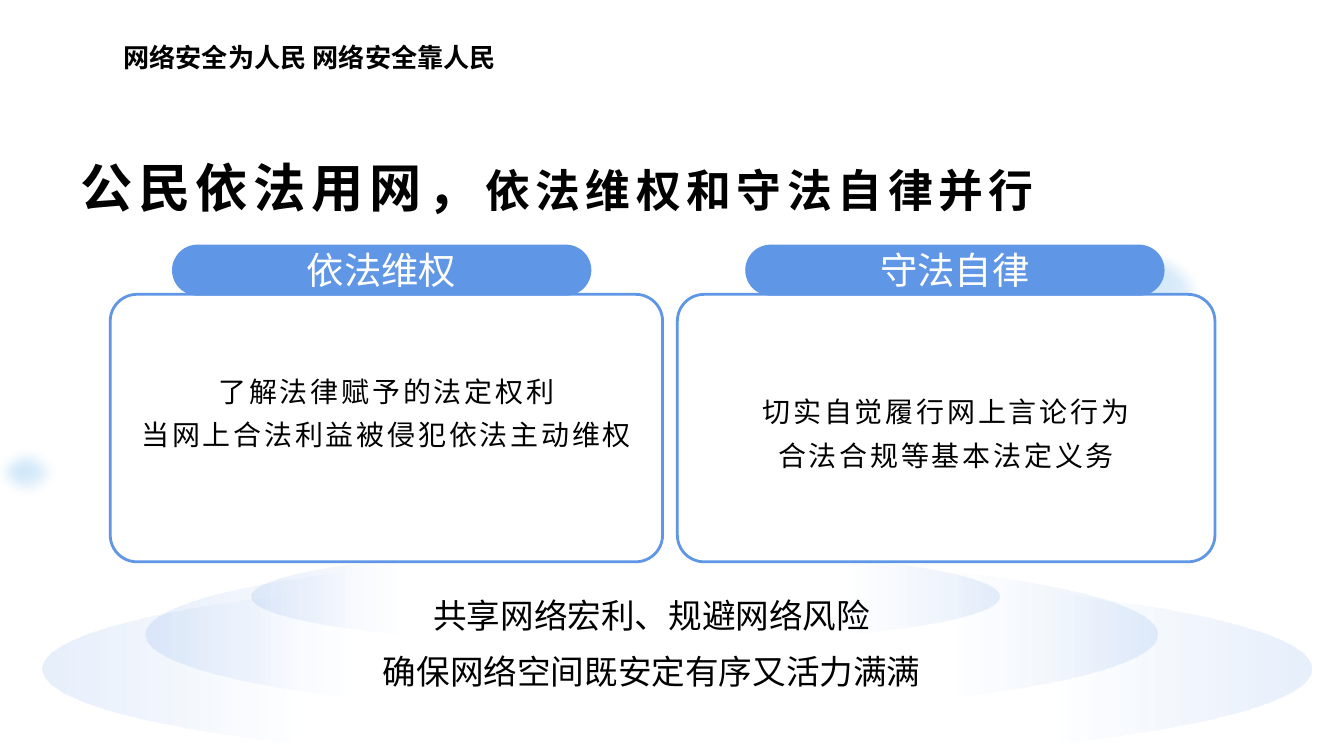
"""Builds a slide on lawful use of the internet by citizens."""
from pptx import Presentation
from pptx.dml.color import RGBColor
from pptx.enum import shapes, text
from pptx.oxml import ns, xmlchemy
from pptx.util import Pt

SCALE = 4572
SANS = "Noto Sans CJK SC"
BLUE, SKY, WHITE, BLACK = "6096E6", "21A9E9", "FFFFFF", "000000"
KIND = shapes.MSO_SHAPE
MID = text.PP_ALIGN.CENTER

SLOGAN = "网络安全为人民 网络安全靠人民"
TITLE = [("公民依法用网，", 28), ("依法维权和守法自律并行", 24)]
GOALS = ["共享网络宏利、规避网络风险", "确保网络空间既安定有序又活力满满"]
CARDS = [
    dict(head="依法维权", tab=256, left=164, wide=822, foot=70,
         lines=["了解法律赋予的法定权利", "当网上合法利益被侵犯依法主动维权"]),
    dict(head="守法自律", tab=1109, left=1008, wide=800, foot=10,
         lines=["切实自觉履行网上言论行为", "合法合规等基本法定义务"]),
]
RINGS = [((64, 857, 1888, 276), []), ((217, 829, 1506, 232), GOALS),
         ((374, 818, 1114, 140), [])]
DOTS = [(-16, 658, 114, 92), (1622, 364, 176, 140)]
RING = [(0, BLUE, 15), (20, BLUE, 0), (80, BLUE, 0), (100, BLUE, 15)]
GLOW = [(0, SKY, 35), (100, BLUE, 10)]

deck = Presentation()
deck.slide_width, deck.slide_height = 2000 * SCALE, 1125 * SCALE
slide = deck.slides.add_slide(deck.slide_layouts[6])


def tint(code):
    """Turn a hex string into a colour."""
    return RGBColor.from_string(code)


def node(parent, tag, **attrs):
    """Append a drawing element and return it."""
    item = xmlchemy.OxmlElement(tag)
    for key, value in attrs.items():
        item.set(key, str(value))
    parent.append(item)
    return item


def write(shape, lines, size=18, font=SANS, color=BLACK, bold=False, gap=0,
          align=None, lead=None, pad=(20, 10, 20, 10), anchor="MIDDLE"):
    """Fill a shape with lines, each a string or a list of sized runs."""
    frame = shape.text_frame
    frame.word_wrap = True
    frame.vertical_anchor = text.MSO_ANCHOR[anchor]
    (frame.margin_left, frame.margin_top, frame.margin_right,
     frame.margin_bottom) = [n * SCALE for n in pad]
    for i, line in enumerate(lines):
        para = frame.add_paragraph() if i else frame.paragraphs[0]
        para.alignment, para.line_spacing = align, lead
        for words, points in [(line, size)] if isinstance(line, str) else line:
            run = para.add_run()
            run.text = words
            face = run.font
            face.size, face.name, face.bold = Pt(points), font, bold
            face.color.rgb = tint(color)
            props = run._r.get_or_add_rPr()
            props.set("spc", str(int(gap * 100)))
            node(props, "a:ea", typeface=font)


def label(box, lines, **style):
    """Add a text box."""
    write(slide.shapes.add_textbox(*[n * SCALE for n in box]), lines, **style)


def draw(kind, box, fill=None, line=None, curve=None):
    """Add a preset shape with a plain fill and line."""
    shape = slide.shapes.add_shape(kind, *[n * SCALE for n in box])
    shape.shadow.inherit = False
    if fill:
        shape.fill.solid()
        shape.fill.fore_color.rgb = tint(fill)
    if line:
        shape.line.color.rgb = tint(line)
        shape.line.width = Pt(1.5)
    else:
        shape.line.fill.background()
    if curve:
        shape.adjustments[0] = curve
    return shape


def oval(box, stops, angle):
    """Add an ellipse with a see-through gradient."""
    shape = draw(KIND.OVAL, box)
    shape.fill.gradient()
    shape.fill.gradient_angle = angle
    stack = shape._element.spPr.find(ns.qn("a:gradFill")).find(ns.qn("a:gsLst"))
    for old in list(stack):
        stack.remove(old)
    for place, code, alpha in stops:
        stop = node(stack, "a:gs", pos=place * 1000)
        node(node(stop, "a:srgbClr", val=code), "a:alpha", val=alpha * 1000)
    return shape


def card(left, wide, lines, foot, **rest):
    """Add an outlined card with its statement."""
    shape = draw(KIND.ROUNDED_RECTANGLE, (left, 438, wide, 398), WHITE, BLUE, 0.1)
    write(shape, lines, size=15, gap=1.5, lead=1.3, align=MID,
          pad=(20, 10, 20, foot))


label((164, 52, 958, 68), [SLOGAN], size=14, bold=True, anchor="TOP")
label((100, 220, 1800, 116), [TITLE], bold=True, gap=3)
card(**CARDS[0])
for box, lines in RINGS:
    write(oval(box, RING, 180), lines, align=MID, lead=Pt(30))
for box in DOTS:
    dot = oval(box, GLOW, 315)
    node(dot._element.spPr.find(ns.qn("a:effectLst")), "a:softEdge", rad=88900)
card(**CARDS[1])
for item in CARDS:
    tab = draw(KIND.ROUNDED_RECTANGLE, (item["tab"], 364, 624, 76), BLUE, curve=0.5)
    write(tab, [item["head"]], size=20, font="Arial", color=WHITE, align=MID,
          pad=(0, 8, 0, 10))

deck.save("out.pptx")
